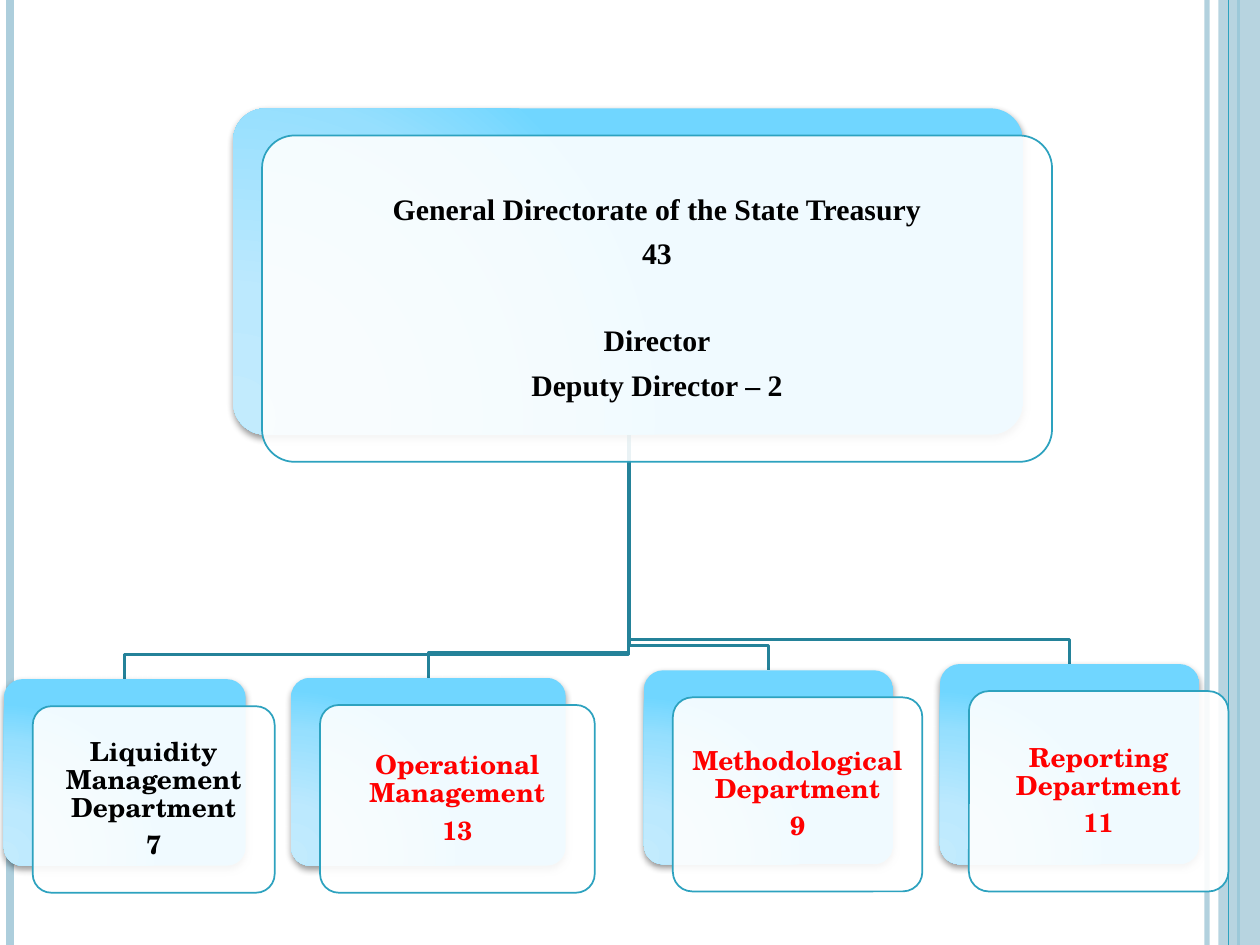
"""Organisation chart of the State Treasury: a directorate and its four departments."""
from lxml import etree
from pptx import Presentation, util as u
from pptx.dml import color
from pptx.enum import shapes, text
from pptx.oxml import ns

deck = Presentation()
deck.slide_width, deck.slide_height = u.Inches(10), u.Inches(7.5)
column, row = deck.slide_width / 100, deck.slide_height / 75
slide = deck.slides.add_slide(deck.slide_layouts[6])
board = slide.shapes


def paint(fill, rgb, opacity=100):
    fill.solid()
    fill.fore_color.rgb = color.RGBColor.from_string(rgb)
    if opacity < 100:
        tone = fill._xPr.find(".//" + ns.qn("a:srgbClr"))
        etree.SubElement(tone, ns.qn("a:alpha")).set("val", str(opacity * 1000))


def add_block(preset, left, top, width, height):
    block = board.add_shape(preset, int(left * column), int(top * row),
                            int(width * column), int(height * row))
    block.shadow.inherit = False
    block.line.fill.background()
    return block


stripes = [(95.8, "ADCEDC", 3, 93), (0.8, "ADCEDC", 4.5, 100), (98.3, "2DA2BF", 1.5, 100),
           None, (97.5, "2DA2BF", 0.75, 100)]
for stripe in stripes:
    if stripe is None:
        band = add_block(shapes.MSO_SHAPE.RECTANGLE, 96.7, 0, 3.3, 75)
        paint(band.fill, "ADCEDC", 87)
        continue
    x, tint, weight, opacity = stripe
    rule = board.add_connector(shapes.MSO_CONNECTOR.STRAIGHT, int(x * column), 0,
                               int(x * column), deck.slide_height)
    rule.line.width = u.Pt(weight)
    paint(rule.line.fill, tint, opacity)
    etree.SubElement(rule._element.spPr, ns.qn("a:effectLst"))

serif, school = "Times New Roman", "TeX Gyre Schola"
directorate = (18.5, 8.6, 62.7, 25.9, serif, 17, 7, "000000",
               ["General Directorate of the State Treasury", "43", "Director",
                "Deputy Director – 2"])
departments = [
    (0.3, 53.9, 19.2, 14.8, school, 15, 5, "000000", ["Liquidity Management Department", "7"]),
    (23.1, 53.8, 21.8, 14.9, school, 15, 5, "FF0000", ["Operational Management", "13"]),
    (51.1, 53.2, 19.8, 15.4, school, 15, 5, "FF0000", ["Methodological Department", "9"]),
    (74.6, 52.7, 20.6, 15.9, school, 15, 5, "FF0000", ["Reporting Department", "11"]),
]

trunk_x, trunk_y = 49.9, directorate[1] + directorate[3]
for left, top, width, *_ in reversed(departments):
    middle, bend = left + width / 2, top - 1.95
    outline = board.build_freeform(int(trunk_x * column), int(trunk_y * row))
    outline.add_line_segments([(int(x * column), int(y * row)) for x, y in
                               ((trunk_x, bend), (middle, bend), (middle, top))], close=False)
    branch = outline.convert_to_shape()
    branch.shadow.inherit = False
    branch.fill.background()
    branch.line.width = u.Pt(2)
    paint(branch.line.fill, "248299")

stops = "".join(f'<a:gs pos="{share}000"><a:srgbClr val="{tint}"/></a:gs>' for share, tint in
                [(0, "C2EBFD"), (30, "BCE9FE"), (75, "96DFFE"), (100, "70D6FF")])
gradient = (f'<a:gradFill {ns.nsdecls("a")} rotWithShape="1"><a:gsLst>{stops}</a:gsLst>'
            '<a:path path="circle"><a:fillToRect l="5000" t="100000" r="120000" b="10000"/>'
            '</a:path></a:gradFill>')
shade = (f'<a:outerShdw {ns.nsdecls("a")} blurRad="50800" dist="25400" dir="5400000" '
         'rotWithShape="0"><a:srgbClr val="000000"><a:alpha val="40000"/></a:srgbClr>'
         '</a:outerShdw>')

for left, top, width, height, face, size, gap, ink, wording in [directorate, *departments]:
    backing = add_block(shapes.MSO_SHAPE.ROUNDED_RECTANGLE, left, top, width, height)
    backing.adjustments[0] = 0.1
    backing.fill.background()
    look = backing._element.spPr
    look.replace(look.find(ns.qn("a:noFill")), etree.fromstring(gradient))
    look.find(ns.qn("a:effectLst")).append(etree.fromstring(shade))

    panel = add_block(shapes.MSO_SHAPE.ROUNDED_RECTANGLE, left + 2.3, top + 2.15, width, height)
    panel.adjustments[0] = 0.1
    paint(panel.fill, "FFFFFF", 90)
    panel.line.width = u.Pt(1)
    paint(panel.line.fill, "2DA2BF")

    frame = panel.text_frame
    frame.word_wrap = True
    frame.vertical_anchor = text.MSO_ANCHOR.MIDDLE
    inset = u.Inches(0.07 if face == serif else 0.06)
    frame.margin_left = frame.margin_right = frame.margin_top = frame.margin_bottom = inset
    for index, words in enumerate(wording):
        paragraph = frame.add_paragraph() if index else frame.paragraphs[0]
        paragraph.alignment = text.PP_ALIGN.CENTER
        paragraph.line_spacing = 0.9
        paragraph.space_after = u.Pt(gap)
        if words == "Director":
            paragraph.space_before = u.Pt(24.5)
        run = paragraph.add_run()
        run.text = words
        run.font.name, run.font.size, run.font.bold = face, u.Pt(size), True
        paint(run.font.fill, ink)

deck.save("out.pptx")
